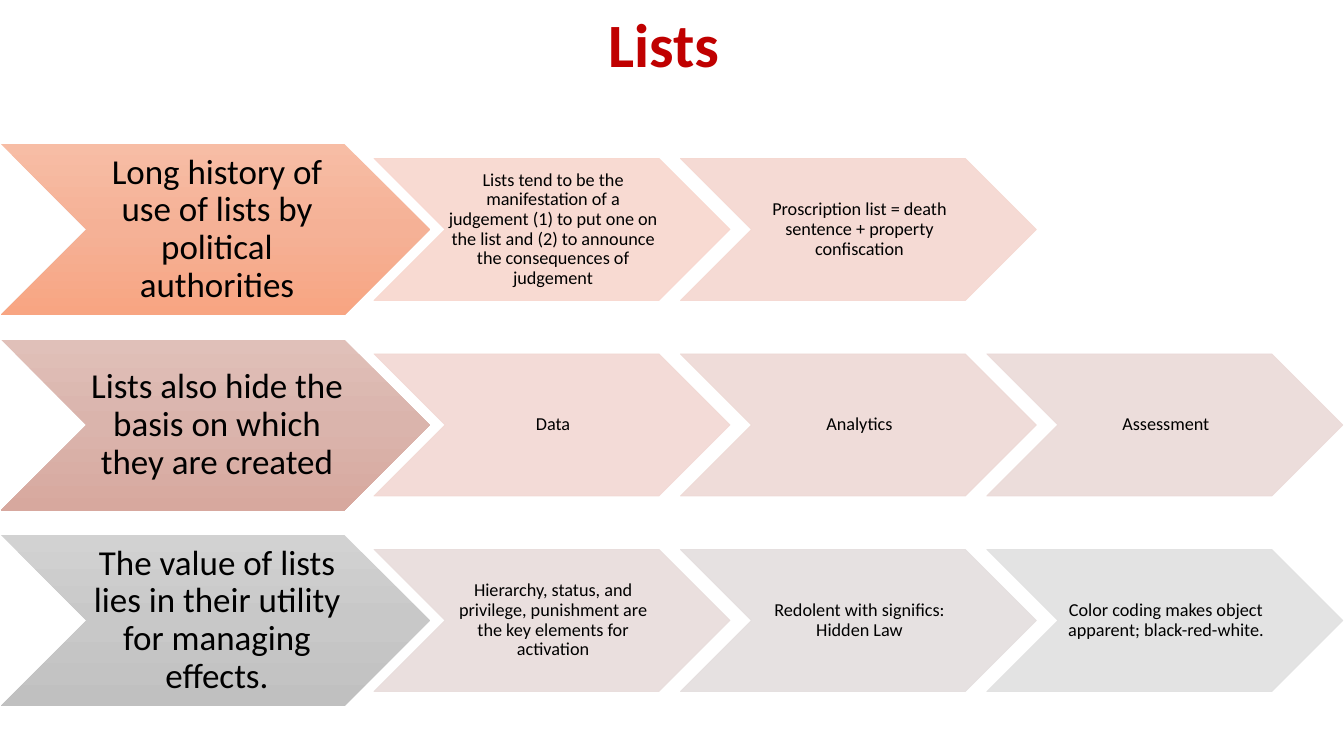
from copy import deepcopy

from lxml import etree
from pptx import Presentation
from pptx.dml.color import RGBColor
from pptx.enum.shapes import MSO_SHAPE
from pptx.enum.text import MSO_ANCHOR, PP_ALIGN
from pptx.oxml.ns import qn
from pptx.util import Pt

PX = 914400 / 100.8


def px(length):
    return round(length * PX)


def write(frame, text, size, color, align, bold=False):
    """Fill a text frame with one formatted paragraph."""
    frame.word_wrap = True
    frame.vertical_anchor = MSO_ANCHOR.MIDDLE
    frame.text = text
    paragraph = frame.paragraphs[0]
    paragraph.alignment = align
    paragraph.line_spacing = 0.9
    font = paragraph.runs[0].font
    font.name, font.size, font.bold = "Calibri", Pt(size), bold
    font.color.rgb = RGBColor.from_string(color)


# Each row: claim, its gradient, then the steps with their tints
ROWS = [
    ("Long history of use of lists by political authorities",
     ("F7BDA5", "F5B196", "F8A582"),
     [("Lists tend to be the manifestation of a judgement (1) to put one on the list "
       "and (2) to announce the consequences of judgement", "F8D7CE"),
      ("Proscription list = death sentence + property confiscation", "F5D7D0")]),
    ("Lists also hide the basis on which they are created",
     ("E0C0B9", "DAB4AC", "D7A89E"),
     [("Data", "F2D8D3"), ("Analytics", "EED9D5"), ("Assessment", "EBDAD8")]),
    ("The value of lists lies in their utility for managing effects.",
     ("D2D2D2", "C8C8C8", "C0C0C0"),
     [("Hierarchy, status, and privilege, punishment are the key elements for activation",
       "E8DCDB"),
      ("Redolent with significs: Hidden Law", "E4DEDE"),
      ("Color coding makes object apparent; black-red-white.", "E1E1E1")]),
]
FIRST_TOP, ROW_PITCH = 144, 195.5
CLAIM_LEFT, CLAIM_WIDTH, CLAIM_HEIGHT = 1, 429, 171
STEP_LEFT, STEP_PITCH, STEP_WIDTH, STEP_HEIGHT = 374, 306.4, 356, 142

prs = Presentation()
prs.slide_width, prs.slide_height = px(1344), px(756)
slide = prs.slides.add_slide(prs.slide_layouts[5])

title = slide.shapes.title
title.left, title.top, title.width, title.height = px(598), 0, px(148), px(95)
write(title.text_frame, "Lists", 44, "C00000", PP_ALIGN.LEFT, bold=True)

for row, (claim_text, gradient, steps) in enumerate(ROWS):
    top = FIRST_TOP + row * ROW_PITCH
    claim = slide.shapes.add_shape(MSO_SHAPE.CHEVRON, px(CLAIM_LEFT), px(top),
                                   px(CLAIM_WIDTH), px(CLAIM_HEIGHT))
    claim.shadow.inherit = False
    claim.line.fill.background()
    claim.fill.gradient()
    claim.fill.gradient_angle = 270
    stop_list = claim._element.spPr.find(".//" + qn("a:gsLst"))
    stop_list.insert(1, deepcopy(stop_list[0]))
    for stop, position, color in zip(claim.fill.gradient_stops, (0, 0.5, 1), gradient):
        stop.position = position
        stop.color.rgb = RGBColor.from_string(color)
    frame = claim.text_frame
    frame.margin_left, frame.margin_right = px(3), 0
    frame.margin_top = frame.margin_bottom = px(2)
    write(frame, claim_text, 25, "000000", PP_ALIGN.CENTER)

    for column, (step_text, tint) in enumerate(steps):
        step = slide.shapes.add_shape(
            MSO_SHAPE.CHEVRON, px(STEP_LEFT + column * STEP_PITCH),
            px(top + (CLAIM_HEIGHT - STEP_HEIGHT) / 2), px(STEP_WIDTH), px(STEP_HEIGHT))
        step.shadow.inherit = False
        step.fill.solid()
        step.fill.fore_color.rgb = RGBColor.from_string(tint)
        step.line.color.rgb = RGBColor.from_string(tint)
        step.line.width = Pt(0.5)
        for color in step._element.spPr.iter(qn("a:srgbClr")):
            etree.SubElement(color, qn("a:alpha"), val="90000")
        frame = step.text_frame
        frame.margin_left, frame.margin_right = px(2), 0
        frame.margin_top = frame.margin_bottom = px(1)
        write(frame, step_text, 13, "000000", PP_ALIGN.CENTER)

prs.save("out.pptx")
